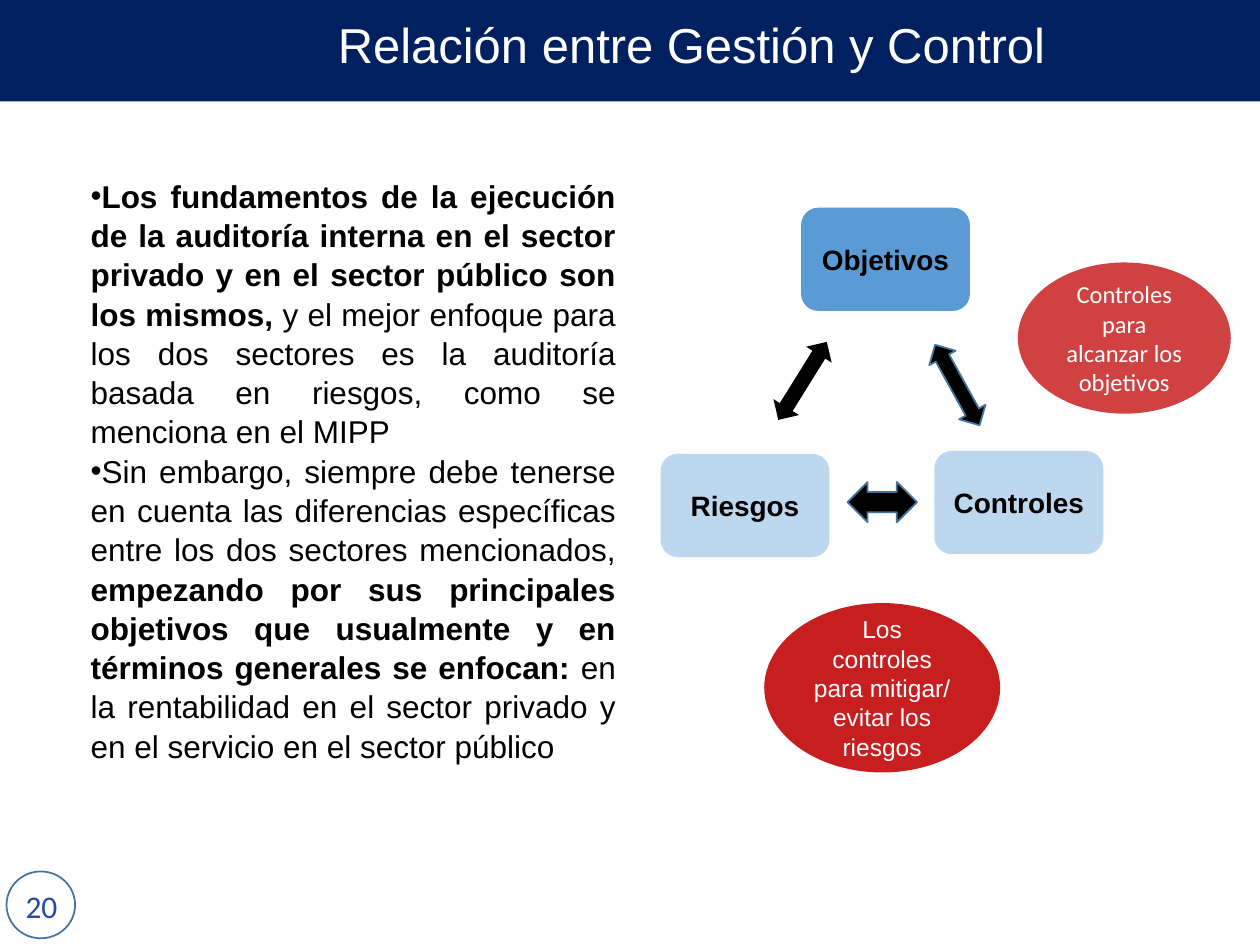
"""Build the slide on how management and control relate."""
from lxml.etree import SubElement
from pptx import Presentation
from pptx.dml.color import RGBColor
from pptx.enum.shapes import MSO_SHAPE
from pptx.enum.text import MSO_ANCHOR, MSO_AUTO_SIZE, PP_ALIGN
from pptx.oxml.ns import qn
from pptx.util import Pt

NAVY = RGBColor(0x00, 0x20, 0x60)
BLUE = RGBColor(0x5B, 0x9B, 0xD5)
PALE_BLUE = RGBColor(0xBD, 0xD7, 0xEE)
OUTLINE = RGBColor(0x43, 0x73, 0x9E)
NUMBER_BLUE = RGBColor(0x26, 0x4C, 0xA2)
RED = RGBColor(0xC0, 0x00, 0x00)
BLACK = RGBColor(0x00, 0x00, 0x00)
WHITE = RGBColor(0xFF, 0xFF, 0xFF)

TITLE = "Relación entre Gestión y Control"
BULLETS = [
    [("Los fundamentos de la ejecución de la auditoría interna en el sector "
      "privado y en el sector público son los mismos, ", True),
     ("y el mejor enfoque para los dos sectores es la auditoría basada en "
      "riesgos, como se menciona en el MIPP", False)],
    [("Sin embargo, siempre debe tenerse en cuenta las diferencias específicas "
      "entre los dos sectores mencionados, ", False),
     ("empezando por sus principales objetivos que usualmente y en términos "
      "generales se enfocan: ", True),
     ("en la rentabilidad en el sector privado y en el servicio en el sector "
      "público", False)],
]
NODE_SIZE = (96.5, 59)
NODES = [
    ("Objetivos", 457.8, 118.7, BLUE),
    ("Riesgos", 377.5, 259.3, PALE_BLUE),
    ("Controles", 534, 257.7, PALE_BLUE),
]
OVALS = [
    ("Controles para alcanzar los objetivos", (581.6, 150, 121.7, 86.4), 74, "Calibri"),
    ("Los controles para mitigar/ evitar los riesgos", (436.7, 344.6, 134.8, 96.8), 88, "Arial"),
]
ARROWS = [
    ((450, 191.4, 17.2, 52.5), 31.9, None),
    ((492.6, 267.1, 23, 39.7), 90, OUTLINE),
    ((538.5, 193.8, 17.2, 52.5), 331.1, OUTLINE),
]


def place(shape, frame):
    shape.left, shape.top, shape.width, shape.height = [Pt(value) for value in frame]


def add_span(para, text, size, color, font="Arial", bold=False):
    span = para.add_run()
    span.text = text
    span.font.size, span.font.name, span.font.bold = Pt(size), font, bold
    span.font.color.rgb = color


def add_block(page, kind, frame, fill, line=None):
    block = page.shapes.add_shape(kind, *[Pt(value) for value in frame])
    block.shadow.inherit = False
    block.fill.solid()
    block.fill.fore_color.rgb = fill
    if line is None:
        block.line.fill.background()
    else:
        block.line.color.rgb = line
        block.line.width = Pt(1)
    return block


def add_label(shape, *style, **options):
    shape.text_frame.word_wrap = True
    para = shape.text_frame.paragraphs[0]
    para.alignment = PP_ALIGN.CENTER
    add_span(para, *style, **options)


def fill_title(title):
    place(title, (185.8, 8.6, 448.6, 52.6))
    title.text_frame.vertical_anchor = MSO_ANCHOR.TOP
    title.text_frame.auto_size = MSO_AUTO_SIZE.NONE
    para = title.text_frame.paragraphs[0]
    para.alignment = PP_ALIGN.LEFT
    para.line_spacing = 0.9
    add_span(para, TITLE, 28, WHITE)


def fill_body(body):
    place(body, (44.6, 96.5, 314.6, 367.2))
    frame = body.text_frame
    frame.auto_size = MSO_AUTO_SIZE.NONE
    for index, spans in enumerate(BULLETS):
        para = frame.add_paragraph() if index else frame.paragraphs[0]
        para.alignment = PP_ALIGN.JUSTIFY
        para.line_spacing = 1.04
        para.space_before = Pt(0)
        properties = para._p.get_or_add_pPr()
        properties.set("marL", "0")
        properties.set("indent", "0")
        SubElement(properties, qn("a:buFont"), typeface="Arial")
        SubElement(properties, qn("a:buChar"), char="•")
        for text, bold in spans:
            add_span(para, text, 18, BLACK, bold=bold)


def main():
    deck = Presentation()
    deck.slide_width, deck.slide_height = Pt(720), Pt(540)
    page = deck.slides.add_slide(deck.slide_layouts[1])
    title, body = page.placeholders
    fill_title(title)
    fill_body(body)

    band = add_block(page, MSO_SHAPE.RECTANGLE, (0, 0, 720, 58), NAVY)
    badge = add_block(page, MSO_SHAPE.OVAL, (3.7, 498, 39.2, 38.2), WHITE, OUTLINE)
    for backdrop in (band, badge):
        title.element.addprevious(backdrop.element)

    for name, left, top, color in NODES:
        node = add_block(page, MSO_SHAPE.ROUNDED_RECTANGLE, (left, top, *NODE_SIZE), color)
        add_label(node, name, 16, BLACK, bold=True)

    for text, frame, opacity, font in OVALS:
        oval = add_block(page, MSO_SHAPE.OVAL, frame, RED)
        tint = oval.element.spPr.find(qn("a:solidFill"))[0]
        SubElement(tint, qn("a:alpha"), val=str(opacity * 1000))
        add_label(oval, text, 14, WHITE, font=font)

    for frame, angle, line in ARROWS:
        arrow = add_block(page, MSO_SHAPE.UP_DOWN_ARROW, frame, BLACK, line)
        arrow.rotation = angle

    number = page.shapes.add_textbox(Pt(7.2), Pt(503.3), Pt(33.1), Pt(29))
    add_label(number, "20", 18, NUMBER_BLUE, font="Calibri")
    deck.save("out.pptx")


if __name__ == "__main__":
    main()
